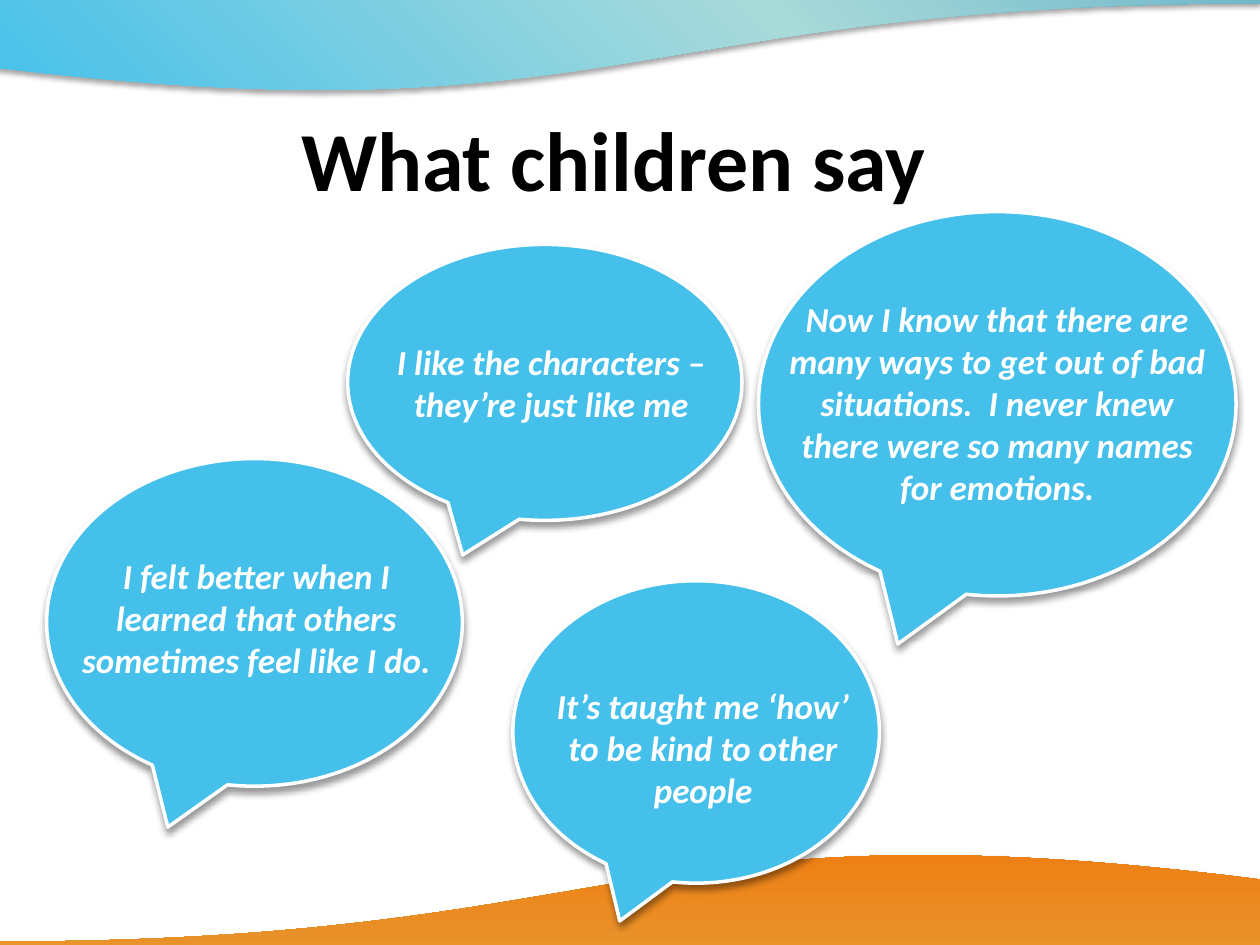
from lxml import etree
from pptx import Presentation
from pptx.dml.color import RGBColor
from pptx.enum.shapes import MSO_SHAPE as Shape
from pptx.enum.text import MSO_ANCHOR as Anchor, PP_ALIGN as Align
from pptx.oxml import parse_xml
from pptx.oxml.ns import nsdecls, qn
from pptx.util import Inches, Pt

BLUE = RGBColor(0x44, 0xC0, 0xEB)
WHITE = RGBColor(0xFF, 0xFF, 0xFF)
BLACK = RGBColor(0x00, 0x00, 0x00)
TEAL = RGBColor(0x49, 0x9F, 0xBD)
MINT = RGBColor(0xA9, 0xDA, 0xDA)
RUST = RGBColor(0xD6, 0x6D, 0x08)
SAND = RGBColor(0xE1, 0xAF, 0x4C)
ORANGE = RGBColor(0xEE, 0x7F, 0x14)


def add_shadow(shape, alpha, blur, dist):
    """Give the shape a black shadow straight below it."""
    shape.shadow.inherit = False
    effects = shape._element.spPr.find(qn("a:effectLst"))
    effects.append(parse_xml(
        f'<a:outerShdw {nsdecls("a")} blurRad="{Pt(blur)}" dist="{Pt(dist)}" '
        f'dir="5400000" rotWithShape="0"><a:srgbClr val="{BLACK}">'
        f'<a:alpha val="{alpha * 1000}"/></a:srgbClr></a:outerShdw>'))


def add_text(shapes, text, box, anchor, style):
    label = shapes.add_textbox(*map(Inches, box))
    frame = label.text_frame
    frame.word_wrap = True
    frame.vertical_anchor = anchor
    para = frame.paragraphs[0]
    para.alignment = Align.CENTER
    run = para.add_run()
    run.text = text
    color = style["color"]
    run.font.color.rgb = color
    for key in ("name", "size", "bold", "italic"):
        setattr(run.font, key, style[key])


prs = Presentation()
prs.slide_width, prs.slide_height = Inches(10), Inches(7.5)
slide = prs.slides.add_slide(prs.slide_layouts[6])

# Waves along the top and bottom edges
waves = [
    ((-0.2, -2.94, 10.2, 3.7), (TEAL, MINT, BLUE), 135, False),
    ((0, 6.74, 10.04, 3.7), (RUST, SAND, ORANGE), 90, True),
]
for box, colors, angle, flip in waves:
    wave = slide.shapes.add_shape(Shape.FLOWCHART_DOCUMENT, *map(Inches, box))
    wave.line.fill.background()
    add_shadow(wave, 35, 3.1, 1.8)
    props = wave._element.spPr
    grad = etree.Element(qn("a:gradFill"), rotWithShape="1")
    stops = etree.SubElement(grad, qn("a:gsLst"))
    for i, color in enumerate(colors):
        stop = etree.SubElement(stops, qn("a:gs"), pos=str(i * 50000))
        etree.SubElement(stop, qn("a:srgbClr"), val=str(color))
    etree.SubElement(grad, qn("a:lin"), ang=str(angle * 60000), scaled="0")
    props.find(qn("a:prstGeom")).addnext(grad)
    if flip:
        for key in ("flipH", "flipV"):
            props.find(qn("a:xfrm")).set(key, "1")

title = dict(name="Calibri", size=Pt(48), bold=True, italic=False, color=BLACK)
add_text(slide.shapes, "What children say", (0.37, 0.78, 9, 0.94),
         Anchor.MIDDLE, title)

# Speech bubbles: quote, bubble box, text box
quote = dict(name="Calibri", size=Pt(20), bold=True, italic=True, color=WHITE)
bubbles = [
    ("Now I know that there are many ways to get out of bad situations.  "
     "I never knew there were so many names for emotions.",
     (6.02, 1.68, 3.79, 3.05), (6.15, 2.31, 3.53, 1.78)),
    ("I felt better when I learned that others sometimes feel like I do.",
     (0.37, 3.64, 3.3, 2.6), (0.51, 4.35, 3.05, 1.11)),
    ("It’s taught me ‘how’ to be kind to other people",
     (4.07, 4.61, 2.91, 2.4), (4.28, 5.38, 2.6, 1.11)),
    ("I like the characters – they’re just like me",
     (2.76, 1.94, 3.13, 2.19), (2.98, 2.65, 2.79, 0.77)),
]
for text, box, area in bubbles:
    group = slide.shapes.add_group_shape()
    bubble = group.shapes.add_shape(Shape.OVAL_CALLOUT, *map(Inches, box))
    bubble.fill.solid()
    bubble.fill.fore_color.rgb = BLUE
    bubble.line.color.rgb = WHITE
    bubble.line.width = Pt(2)
    add_shadow(bubble, 40, 4, 3)
    add_text(group.shapes, text, area, Anchor.TOP, quote)

prs.save("out.pptx")
